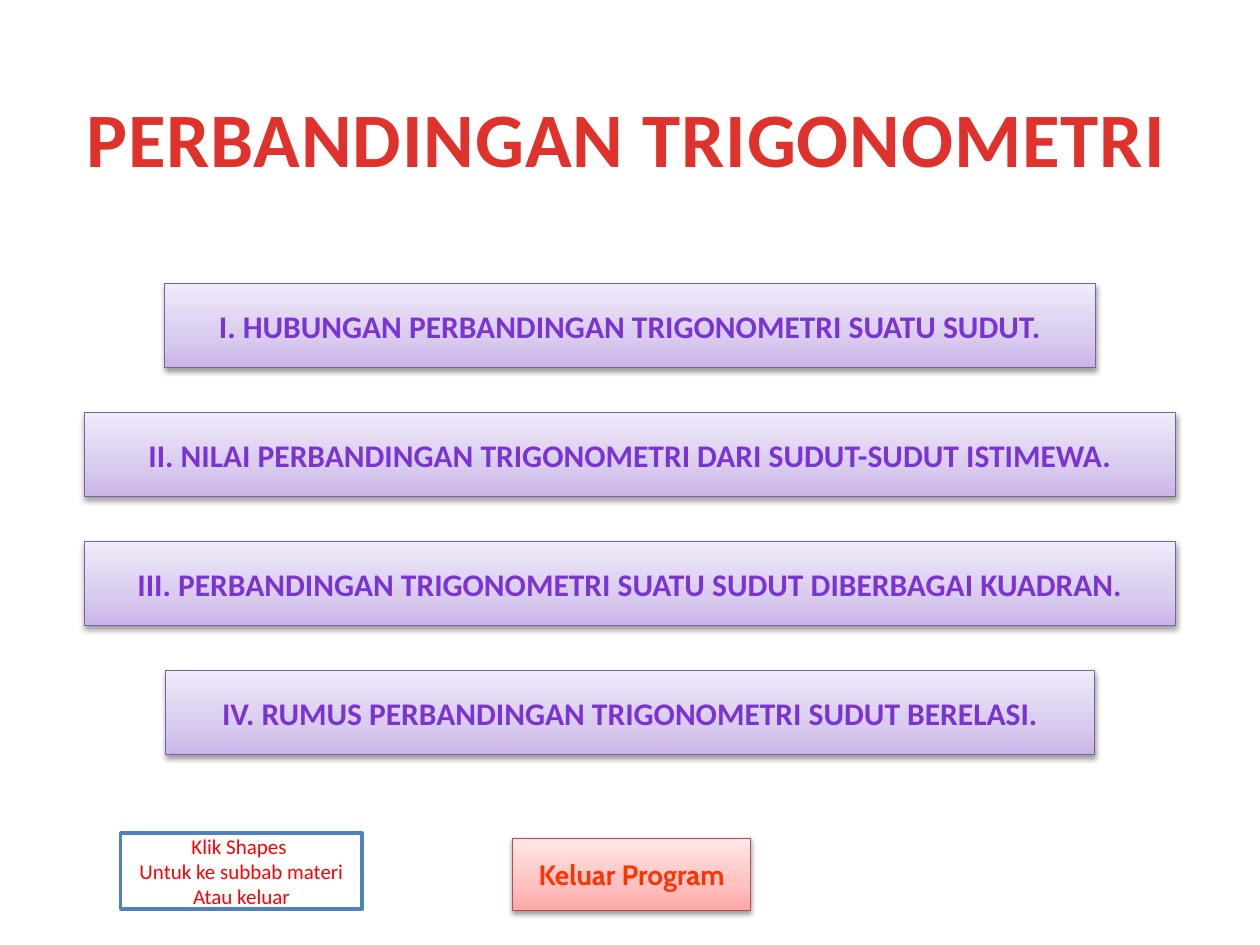
from dataclasses import dataclass

from lxml.etree import SubElement
from pptx import Presentation
from pptx.dml.color import RGBColor
from pptx.enum.shapes import MSO_SHAPE as Shape
from pptx.enum.text import MSO_ANCHOR as Anchor, MSO_AUTO_SIZE as AutoSize, PP_ALIGN as Align
from pptx.oxml.ns import qn
from pptx.util import Pt


@dataclass(frozen=True)
class Theme:
    font: str = "Calibri"
    exit_font: str = "Cabin"
    title: str = "E0322D"
    topic: str = "7B34D2"
    topic_line: str = "7D60A0"
    topic_stops: tuple = ((0, "C9B5E8"), (35, "D8CBEE"), (100, "F0EAF9"))
    note: str = "FF0000"
    note_line: str = "4F81BD"
    note_fill: str = "FFFFFF"
    exit_text: str = "FF3300"
    exit_line: str = "BF4C48"
    exit_stops: tuple = ((0, "FFA6A5"), (35, "FFC0BF"), (100, "FFE7E7"))
    title_size: int = 44
    topic_size: int = 18
    exit_size: int = 16
    note_size: int = 12


class MenuSlide:
    def __init__(self, prs, theme):
        self.theme = theme
        self.slide = prs.slides.add_slide(prs.slide_layouts[5])

    def set_text(self, sp, lines, size, color, font=None, bold=False, wrap=True):
        tf = sp.text_frame
        tf.text = "\n".join(lines)
        tf.word_wrap = wrap
        tf.auto_size = AutoSize.NONE
        tf.vertical_anchor = Anchor.MIDDLE
        for p in tf.paragraphs:
            p.alignment = Align.CENTER
            p.font.name = font or self.theme.font
            p.font.size = Pt(size)
            p.font.bold = bold
            p.font.color.rgb = RGBColor.from_string(color)

    def title(self, text, x, y, w, h):
        sp = self.slide.shapes.title
        sp.left, sp.top, sp.width, sp.height = Pt(x), Pt(y), Pt(w), Pt(h)
        self.set_text(sp, [text], self.theme.title_size, self.theme.title, bold=True, wrap=False)
        r = sp.text_frame.paragraphs[0].runs[0]
        r.font._element.set("spc", "50")  # letter spacing, 1/100 pt

    def box(self, x, y, w, h, line, weight):
        sp = self.slide.shapes.add_shape(Shape.RECTANGLE, Pt(x), Pt(y), Pt(w), Pt(h))
        sp.line.color.rgb = RGBColor.from_string(line)
        sp.line.width = Pt(weight)
        sp.shadow.inherit = False
        return sp

    def note(self, lines, x, y, w, h):
        t = self.theme
        sp = self.box(x, y, w, h, t.note_line, 2)
        sp.fill.solid()
        sp.fill.fore_color.rgb = RGBColor.from_string(t.note_fill)
        self.set_text(sp, lines, t.note_size, t.note)

    def button(self, text, x, y, w, h, line, stops, **style):
        sp = self.box(x, y, w, h, line, 0.75)
        self.gradient(sp, stops)
        self.drop_shadow(sp)
        self.set_text(sp, [text], bold=True, **style)

    def gradient(self, sp, stops):
        sp.fill.gradient()
        sp.fill.gradient_angle = 90
        gs_list = sp._element.spPr.find(".//" + qn("a:gsLst"))
        gs_list.clear()
        for pos, color in stops:
            gs = SubElement(gs_list, qn("a:gs"), pos=str(pos * 1000))
            SubElement(gs, qn("a:srgbClr"), val=color)

    def drop_shadow(self, sp):
        effects = sp._element.spPr.find(qn("a:effectLst"))
        shadow = SubElement(effects, qn("a:outerShdw"), blurRad=str(Pt(3.1)),
                            dist=str(Pt(1.6)), dir="5400000", rotWithShape="0")
        color = SubElement(shadow, qn("a:srgbClr"), val="000000")
        SubElement(color, qn("a:alpha"), val="38000")


def main():
    prs = Presentation()
    prs.slide_width, prs.slide_height = Pt(720), Pt(540)
    theme = Theme()
    menu = MenuSlide(prs, theme)

    # Heading
    menu.title("PERBANDINGAN TRIGONOMETRI", 39, 48, 638, 60.5)

    # Topic buttons, centred and evenly spaced
    topics = [
        ("I. HUBUNGAN PERBANDINGAN TRIGONOMETRI SUATU SUDUT.", 532),
        ("II. NILAI PERBANDINGAN TRIGONOMETRI DARI SUDUT-SUDUT ISTIMEWA.", 623.5),
        ("III. PERBANDINGAN TRIGONOMETRI SUATU SUDUT DIBERBAGAI KUADRAN.", 623.5),
        ("IV. RUMUS PERBANDINGAN TRIGONOMETRI SUDUT BERELASI.", 531),
    ]
    top, pitch, height = 162, 73.75, 48
    for i, (text, width) in enumerate(topics):
        menu.button(text, (720 - width) / 2, top + i * pitch, width, height,
                    theme.topic_line, theme.topic_stops,
                    size=theme.topic_size, color=theme.topic)

    # Hint and exit button
    menu.note(["Klik Shapes ", "Untuk ke subbab materi", "Atau keluar"], 69, 476, 138, 43.5)
    menu.button("Keluar Program", 293, 479, 136, 41.5, theme.exit_line, theme.exit_stops,
                size=theme.exit_size, color=theme.exit_text, font=theme.exit_font, wrap=False)

    prs.save("out.pptx")


if __name__ == "__main__":
    main()
